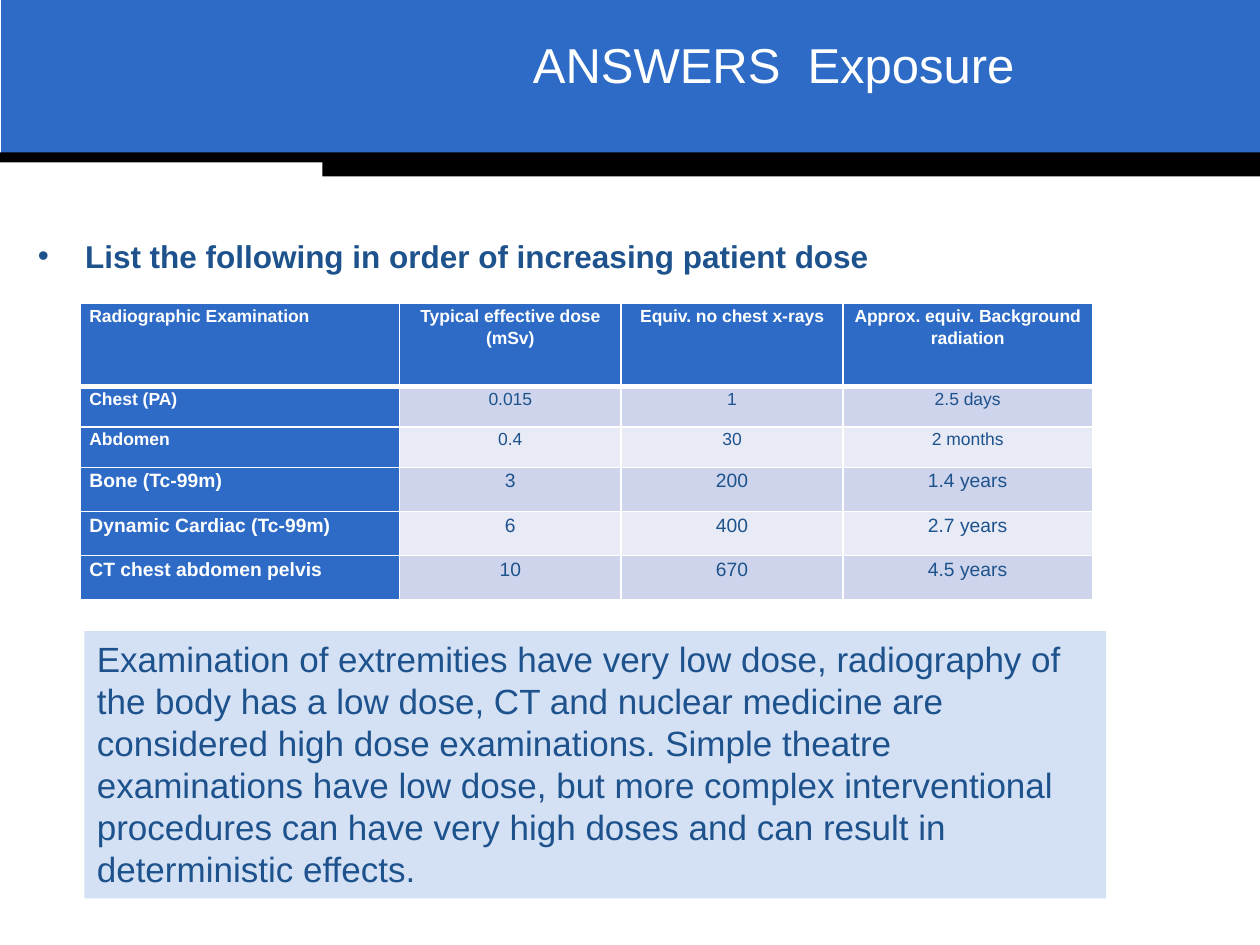
from lxml.etree import SubElement
from pptx import Presentation
from pptx.dml.color import RGBColor
from pptx.enum.shapes import MSO_SHAPE as Shape
from pptx.enum.text import MSO_ANCHOR as Anchor, MSO_AUTO_SIZE as AutoSize, PP_ALIGN as Align
from pptx.oxml.ns import qn
from pptx.util import Inches, Pt

BLUE = RGBColor(0x2D, 0x6B, 0xC7)
NAVY = RGBColor(0x1D, 0x52, 0x8D)
BLACK = RGBColor(0, 0, 0)
WHITE = RGBColor(0xFF, 0xFF, 0xFF)
PALE = RGBColor(0xD4, 0xE1, 0xF5)
STRIPES = (RGBColor(0xE8, 0xEB, 0xF5), RGBColor(0xCD, 0xD4, 0xEB))

TITLE = "ANSWERS  Exposure"
QUESTION = "List the following in order of increasing patient dose"
DOSES = [
    ("Radiographic Examination", "Typical effective dose (mSv)",
     "Equiv. no chest x-rays", "Approx. equiv. Background radiation"),
    ("Chest (PA)", "0.015", "1", "2.5 days"),
    ("Abdomen", "0.4", "30", "2 months"),
    ("Bone (Tc-99m)", "3", "200", "1.4 years"),
    ("Dynamic Cardiac (Tc-99m)", "6", "400", "2.7 years"),
    ("CT chest abdomen pelvis", "10", "670", "4.5 years"),
]
SUMMARY = (
    "Examination of extremities have very low dose, radiography of the body has a low dose, "
    "CT and nuclear medicine are considered high dose examinations. Simple theatre examinations "
    "have low dose, but more complex interventional procedures can have very high doses and can "
    "result in deterministic effects."
)
BANDS = [
    ((0.01, -0.01, 9.99, 1.23), BLUE),
    ((0, 1.21, 10, 0.08), BLACK),
    ((2.56, 1.24, 7.44, 0.16), BLACK),
]
COLUMN_WIDTHS = (2.53, 1.76, 1.76, 1.98)
ROW_HEIGHTS = (0.66, 0.32, 0.32, 0.35, 0.35, 0.35)
ROW_SIZES = (10, 10, 10, 11, 11, 11)


def box(*lengths):
    """Convert lengths in inches to slide units."""
    return [Inches(length) for length in lengths]


def apply(target, **values):
    """Set each named attribute on the target."""
    for name, value in values.items():
        setattr(target, name, value)


def write(frame, text, size, color, bold=False, align=Align.LEFT, spacing=1.0):
    """Fill a text frame with one formatted paragraph."""
    frame.word_wrap = True
    frame.text = text
    paragraph = frame.paragraphs[0]
    apply(paragraph, alignment=align, line_spacing=spacing, space_before=Pt(0))
    run_font = paragraph.runs[0].font
    apply(run_font, name="Arial", size=Pt(size), bold=bold)
    run_font.color.rgb = color


def add_block(slide, place, color):
    """Add a plain filled rectangle."""
    block = slide.shapes.add_shape(Shape.RECTANGLE, *box(*place))
    block.shadow.inherit = False
    block.fill.solid()
    block.fill.fore_color.rgb = color
    block.line.fill.background()
    return block


def add_borders(cell, top, bottom):
    """Draw white borders around a table cell."""
    properties = cell._tc.get_or_add_tcPr()
    widths = {"a:lnL": 1, "a:lnR": 1, "a:lnT": top, "a:lnB": bottom}
    for position, (tag, width) in enumerate(widths.items()):
        line = SubElement(properties, qn(tag), w=str(Pt(width)))
        SubElement(SubElement(line, qn("a:solidFill")), qn("a:srgbClr"), val=str(WHITE))
        properties.insert(position, line)


def add_bands(slide):
    """Place the header bands behind the placeholders."""
    tree = slide.shapes._spTree
    for position, (place, color) in enumerate(BANDS, start=2):
        tree.insert(position, add_block(slide, place, color)._element)


def fill_placeholder(holder, place, text, size, color, bold, anchor):
    """Move a placeholder and write its text without a bullet."""
    apply(holder, **dict(zip(("left", "top", "width", "height"), box(*place))))
    frame = holder.text_frame
    apply(frame, auto_size=AutoSize.NONE, vertical_anchor=anchor)
    bullet = frame.paragraphs[0]._p.get_or_add_pPr()
    apply_indent = {"marL": "0", "indent": "0"}
    bullet.attrib.update(apply_indent)
    SubElement(bullet, qn("a:buNone"))
    write(frame, text, size, color, bold)


def add_dose_table(slide):
    """Build the dose table with a heading row and heading column."""
    place = box(0.64, 2.41, sum(COLUMN_WIDTHS), sum(ROW_HEIGHTS))
    table = slide.shapes.add_table(len(DOSES), len(COLUMN_WIDTHS), *place).table
    for column, width in zip(table.columns, COLUMN_WIDTHS):
        column.width = Inches(width)
    for r, (values, height, size) in enumerate(zip(DOSES, ROW_HEIGHTS, ROW_SIZES)):
        table.rows[r].height = Inches(height)
        for c, value in enumerate(values):
            cell = table.cell(r, c)
            heading = r == 0 or c == 0
            apply(cell, margin_left=Inches(0.07), margin_right=Inches(0.07),
                  margin_top=0, margin_bottom=0)
            cell.fill.solid()
            cell.fill.fore_color.rgb = BLUE if heading else STRIPES[r % 2]
            add_borders(cell, top=3 if r == 1 else 1, bottom=3 if r == 0 else 1)
            write(cell.text_frame, value, size, WHITE if heading else NAVY, heading,
                  Align.CENTER if c else Align.LEFT, 1.15)


def main():
    """Build and save the slide."""
    deck = Presentation()
    apply(deck, slide_width=Inches(10), slide_height=Inches(7.5))
    slide = deck.slides.add_slide(deck.slide_layouts[1])
    add_bands(slide)
    title, question = slide.placeholders
    fill_placeholder(title, (4.13, 0.25, 5.67, 0.51), TITLE, 28, WHITE, False, Anchor.MIDDLE)
    fill_placeholder(question, (0.2, 1.83, 9.61, 5.39), QUESTION, 18, NAVY, True, Anchor.TOP)
    add_dose_table(slide)
    summary = add_block(slide, (0.67, 5.01, 8.11, 2.12), PALE)
    summary.text_frame.vertical_anchor = Anchor.TOP
    write(summary.text_frame, SUMMARY, 20, NAVY)
    deck.save("out.pptx")


if __name__ == "__main__":
    main()
